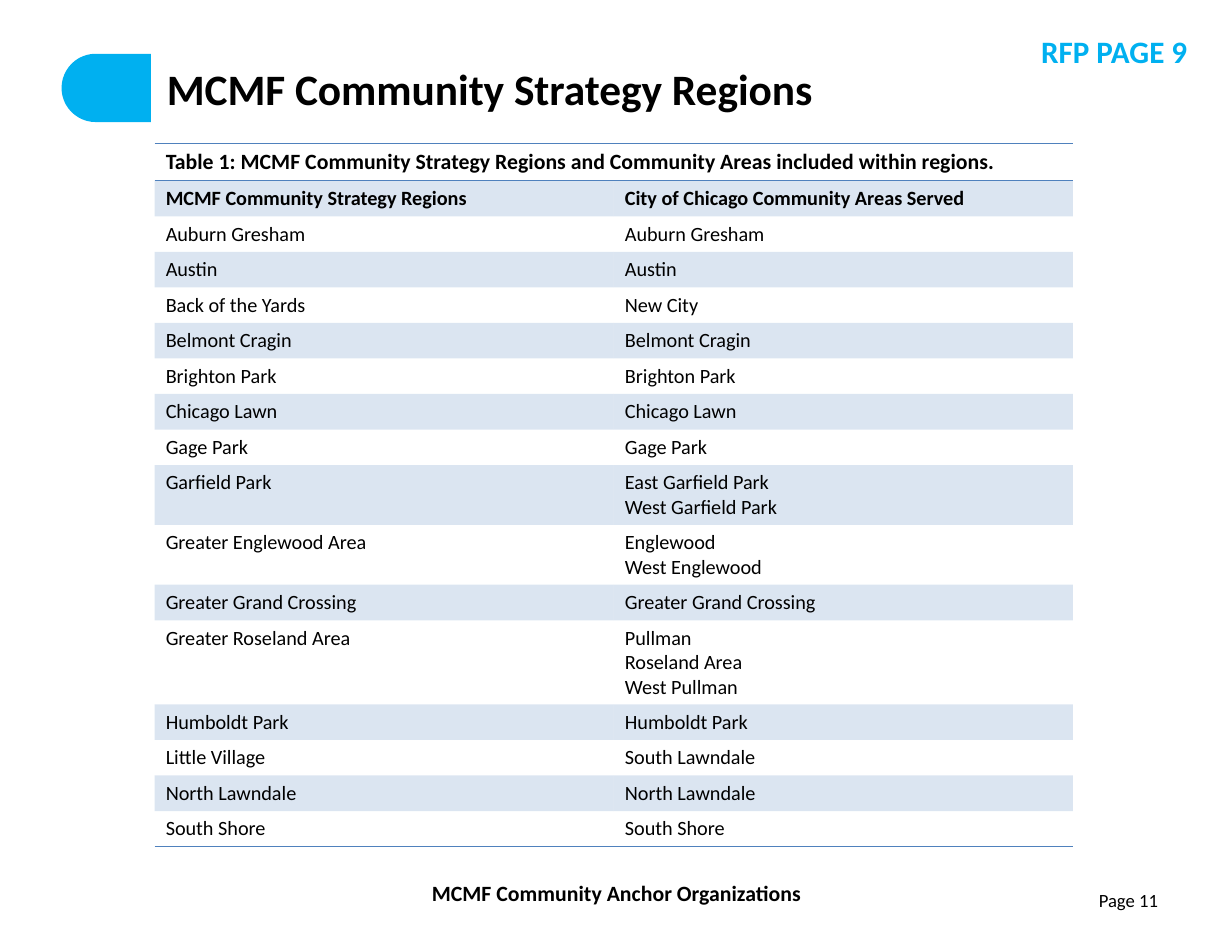
import pptx
import pptx.util
import pptx.dml.color
import pptx.enum.shapes
import pptx.enum.text
import pptx.oxml
import pptx.oxml.ns

Inches = pptx.util.Inches
Pt = pptx.util.Pt
RGBColor = pptx.dml.color.RGBColor
Align = pptx.enum.text.PP_ALIGN
Anchor = pptx.enum.text.MSO_ANCHOR
Shape = pptx.enum.shapes.MSO_SHAPE
qn = pptx.oxml.ns.qn

BLACK = RGBColor(0x00, 0x00, 0x00)
WHITE = RGBColor(0xFF, 0xFF, 0xFF)
CYAN = RGBColor(0x00, 0xB0, 0xF0)
BLUE = RGBColor(0x4F, 0x81, 0xBD)
FONT = "Calibri"
PLAIN = "{2D5ABB26-0587-4C30-8999-92F81FD0307C}"

TITLE = "Table 1: MCMF Community Strategy Regions and Community Areas included within regions."
HEADS = ("MCMF Community Strategy Regions", "City of Chicago Community Areas Served")
AREAS = [
    ("Auburn Gresham", "Auburn Gresham"),
    ("Austin", "Austin"),
    ("Back of the Yards", "New City"),
    ("Belmont Cragin", "Belmont Cragin"),
    ("Brighton Park", "Brighton Park"),
    ("Chicago Lawn", "Chicago Lawn"),
    ("Gage Park", "Gage Park"),
    ("Garfield Park", "East Garfield Park\nWest Garfield Park"),
    ("Greater Englewood Area", "Englewood\nWest Englewood"),
    ("Greater Grand Crossing", "Greater Grand Crossing"),
    ("Greater Roseland Area", "Pullman\nRoseland Area\nWest Pullman"),
    ("Humboldt Park", "Humboldt Park"),
    ("Little Village", "South Lawndale"),
    ("North Lawndale", "North Lawndale"),
    ("South Shore", "South Shore"),
]


def write(frame, text, size, bold=False, color=BLACK, align=Align.LEFT):
    frame.text = text
    for para in frame.paragraphs:
        para.alignment = align
        para.font.name = FONT
        para.font.size = Pt(size)
        para.font.bold = bold
        para.font.color.rgb = color


def label(slide, box, text, size, inset=(0.1, 0.05), anchor=Anchor.TOP, **style):
    frame = slide.shapes.add_textbox(*map(Inches, box)).text_frame
    frame.word_wrap = True
    frame.vertical_anchor = anchor
    frame.margin_left = frame.margin_right = Inches(inset[0])
    frame.margin_top = frame.margin_bottom = Inches(inset[1])
    write(frame, text, size, **style)


def block(slide, kind, box, color):
    shape = slide.shapes.add_shape(kind, *map(Inches, box))
    shape.shadow.inherit = False
    shape.fill.solid()
    shape.fill.fore_color.rgb = color
    shape.line.fill.background()
    return shape


def header(slide, box):
    left, top, width, height = box
    pill = block(slide, Shape.ROUNDED_RECTANGLE, (left, top + 0.07, width - 0.04, 0.61), CYAN)
    pill.adjustments[0] = 0.5
    cover = block(slide, Shape.RECTANGLE, (left + 0.81, top, width - 0.81, height), WHITE)
    cover.line.color.rgb = WHITE
    cover.line.width = Pt(2)
    label(slide, (left + 0.83, top + 0.1, 9.07, 0.55), "MCMF Community Strategy Regions",
          27.9, inset=(0.11, 0.06), anchor=Anchor.MIDDLE, bold=True)
    label(slide, (left + 4.63, top - 0.17, 5.52, 0.44), "RFP PAGE 9", 20,
          bold=True, color=CYAN, align=Align.RIGHT)


def rule(cell, side):
    cell._tc.get_or_add_tcPr().append(pptx.oxml.parse_xml(
        f'<a:{side} {pptx.oxml.ns.nsdecls("a")} w="12700">'
        f'<a:solidFill><a:srgbClr val="{BLUE}"/></a:solidFill></a:{side}>'))


def tint(cell):
    cell.fill.solid()
    cell.fill.fore_color.rgb = BLUE
    color = cell._tc.tcPr.find(qn("a:solidFill")).find(qn("a:srgbClr"))
    color.append(pptx.oxml.parse_xml(
        f'<a:alpha {pptx.oxml.ns.nsdecls("a")} val="20000"/>'))


def regions(slide, box):
    rows = [(TITLE, ""), HEADS] + AREAS
    last = len(rows) - 1
    grid = slide.shapes.add_table(len(rows), 2, *map(Inches, box)).table
    grid.first_row = False
    grid.horz_banding = False
    grid._tbl.tblPr.find(qn("a:tableStyleId")).text = PLAIN
    for col in grid.columns:
        col.width = Inches(box[2] / 2)
    for r, texts in enumerate(rows):
        lines = texts[1].count("\n") + 1
        grid.rows[r].height = Inches(0.1 + 0.2 * lines)
        for c, text in enumerate(texts):
            cell = grid.cell(r, c)
            write(cell.text_frame, text, 13 if r else 14, bold=r < 2)
            if r == 0:
                rule(cell, "lnT")
            if r in (0, last):
                rule(cell, "lnB")
            if r % 2:
                tint(cell)
            else:
                cell.fill.background()
    grid.cell(0, 0).merge(grid.cell(0, 1))


def footer(slide, box):
    left, top, width, height = box
    label(slide, (left, top, 5.69, 0.34), "MCMF Community Anchor Organizations", 14,
          bold=True, align=Align.CENTER)
    label(slide, (left + width - 2.57, top + 0.07, 2.57, height - 0.07), "Page 11", 12,
          inset=(0.11, 0.06), align=Align.RIGHT)


def main():
    deck = pptx.Presentation()
    deck.slide_width = Inches(11)
    deck.slide_height = Inches(8.5)
    slide = deck.slides.add_slide(deck.slide_layouts[6])
    header(slide, (0.55, 0.41, 8.48, 0.86))
    regions(slide, (1.38, 1.28, 8.2, 6.27))
    footer(slide, (2.66, 7.81, 7.79, 0.52))
    deck.save("out.pptx")


if __name__ == "__main__":
    main()
